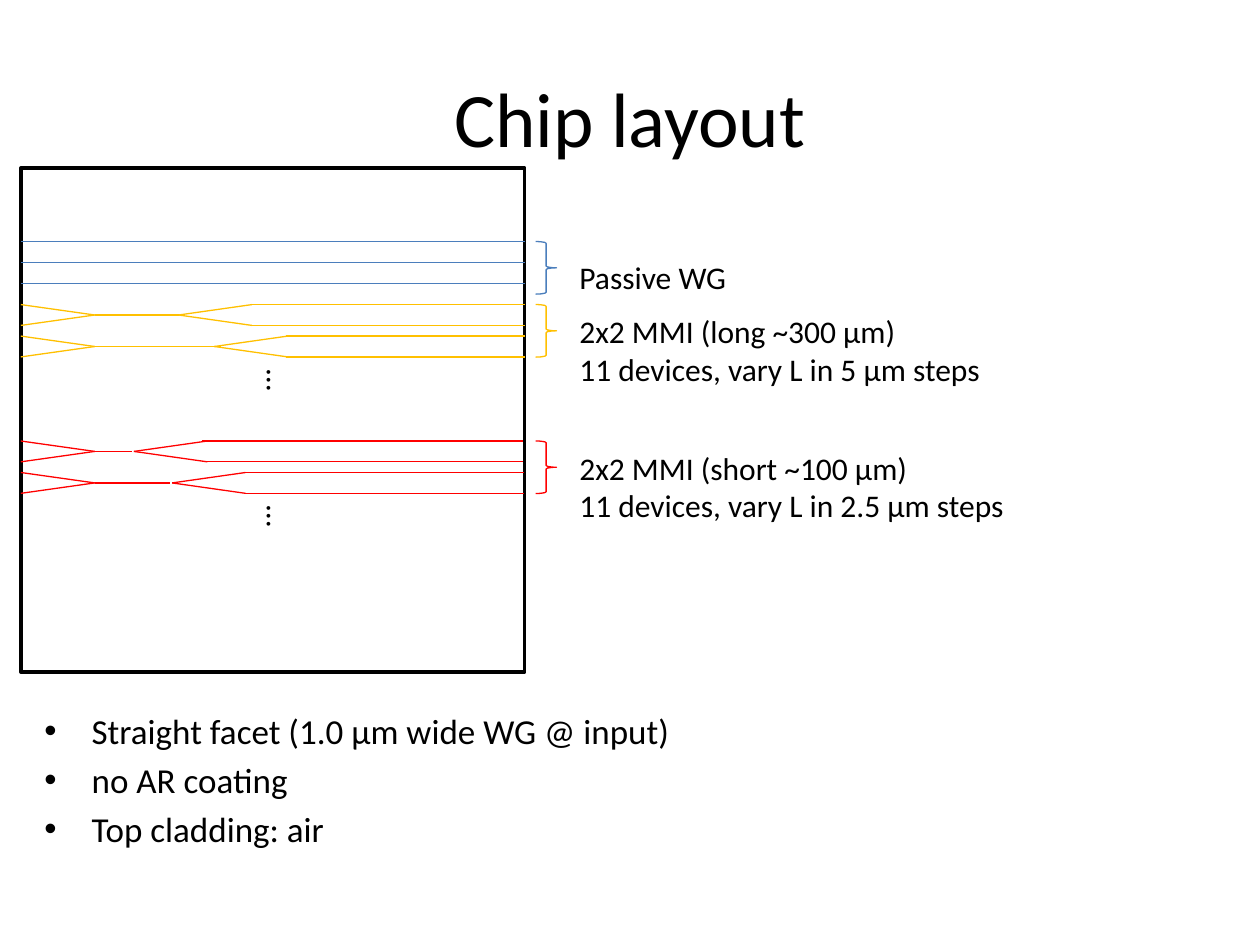
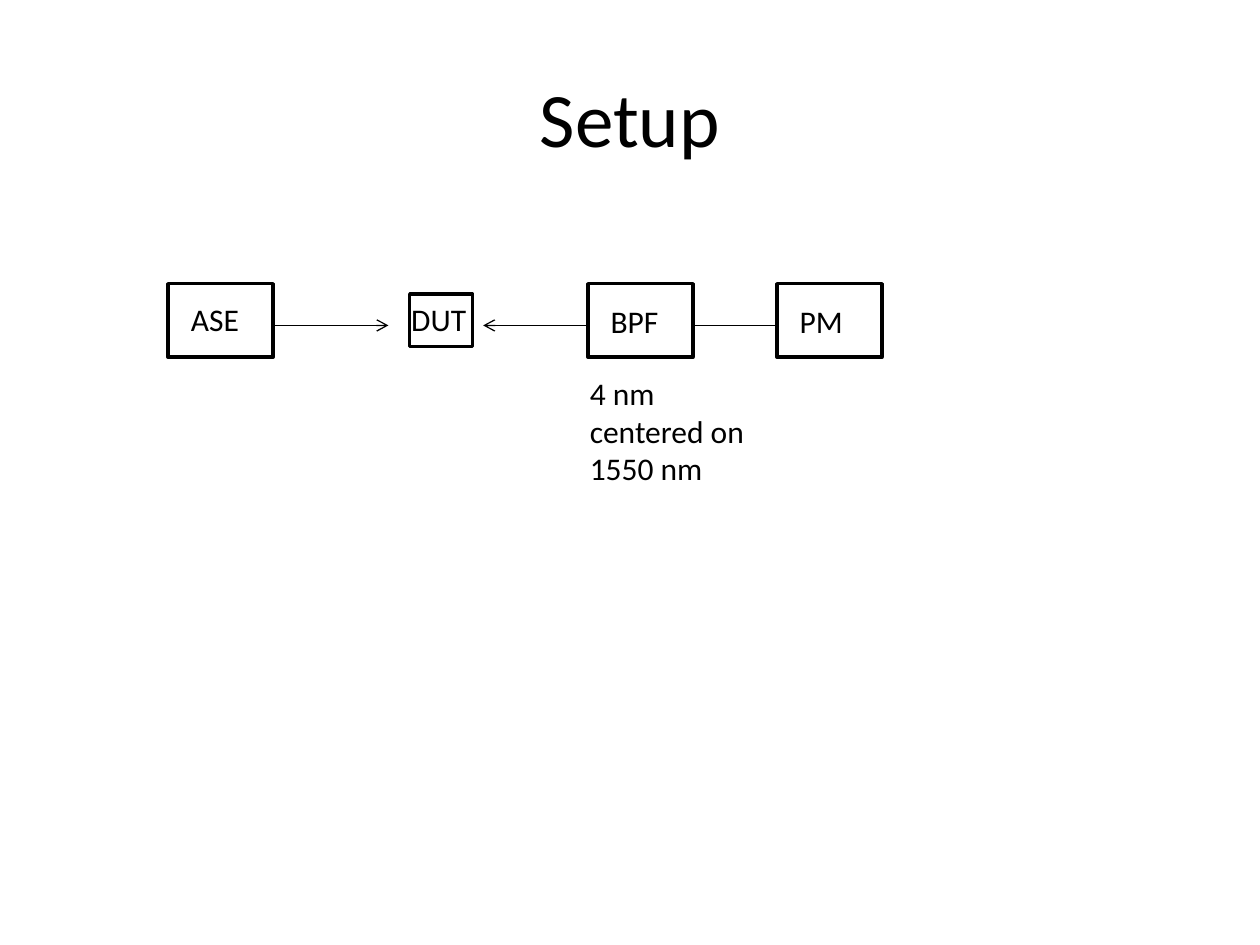
"""Build the chip layout and measurement setup slides."""
from pptx import Presentation
from pptx.dml.color import RGBColor
from pptx.enum.shapes import MSO_CONNECTOR, MSO_SHAPE
from pptx.enum.text import MSO_ANCHOR, MSO_AUTO_SIZE, PP_ALIGN
from pptx.oxml.ns import qn
from pptx.util import Cm, Pt
from lxml import etree

BLACK = RGBColor(0x00, 0x00, 0x00)
BLUE = RGBColor(0x4B, 0x7E, 0xBC)
GOLD = RGBColor(0xFF, 0xC0, 0x00)
RED = RGBColor(0xFF, 0x00, 0x00)
FONT = "Calibri"
RECT = MSO_SHAPE.RECTANGLE
BRACE = MSO_SHAPE.RIGHT_BRACE
LINE = MSO_CONNECTOR.STRAIGHT
CENTER = PP_ALIGN.CENTER
MIDDLE = MSO_ANCHOR.MIDDLE
GROW = MSO_AUTO_SIZE.SHAPE_TO_FIT_TEXT

THIN, THICK = 0.75, 2
EDGE, SIDE = 0.42, 10.16
FACET = EDGE + SIDE
PORT = 1.91
TAPER = 1.48
GAP = 0.42
PITCH = 0.635


def place(shape, left, top, width, height):
    """Move and size a shape, in centimetres."""
    shape.left, shape.top = Cm(left), Cm(top)
    shape.width, shape.height = Cm(width), Cm(height)


def write(frame, lines, size):
    """Fill a text frame with one paragraph per line."""
    frame.text = "\n".join(lines)
    for para in frame.paragraphs:
        para.font.name = FONT
        para.font.size = Pt(size)
        para.font.color.rgb = BLACK


def start(deck, layout, title):
    """Add a slide with the shared title style."""
    slide = deck.slides.add_slide(deck.slide_layouts[layout])
    head = slide.shapes.title
    place(head, 1.27, 0.76, 22.86, 3.18)
    write(head.text_frame, [title], 44)
    head.text_frame.vertical_anchor = MIDDLE
    head.text_frame.paragraphs[0].alignment = CENTER
    return slide


def label(slide, left, top, width, height, *lines, turn=0):
    """Add a text box."""
    box = slide.shapes.add_textbox(Cm(left), Cm(top), Cm(width), Cm(height))
    box.rotation = turn
    box.text_frame.word_wrap = True
    box.text_frame.auto_size = GROW
    write(box.text_frame, lines, 18)


def outline(slide, kind, left, top, width, height, color, weight):
    """Add an unfilled preset shape."""
    shape = slide.shapes.add_shape(kind, Cm(left), Cm(top), Cm(width), Cm(height))
    shape.shadow.inherit = False
    shape.fill.background()
    shape.line.color.rgb = color
    shape.line.width = Pt(weight)


def wire(slide, x1, y1, x2, y2, color, arrow=False):
    """Add a thin straight line, with an arrowhead at its end if wanted."""
    line = slide.shapes.add_connector(LINE, Cm(x1), Cm(y1), Cm(x2), Cm(y2))
    line.line.color.rgb = color
    line.line.width = Pt(THIN)
    if arrow:
        etree.SubElement(line.line._get_or_add_ln(), qn("a:tailEnd"), type="arrow")
    etree.SubElement(line._element.spPr, qn("a:effectLst"))


def brace(slide, top, color):
    """Add the brace beside a group of guides."""
    outline(slide, BRACE, 10.8, top, 0.42, 1.06, color, THIN)


def coupler(slide, top, core, fork, arm, end, color):
    """Draw a 2x2 coupler: input tapers, core, output tapers and arms."""
    mid = top + GAP / 2
    wire(slide, PORT, mid, core, mid, color)
    for y in (top, top + GAP):
        wire(slide, EDGE, y, PORT, mid, color)
        wire(slide, fork, mid, fork + TAPER, y, color)
        wire(slide, arm, y, end, y, color)


def chip(deck):
    """Build the chip layout slide."""
    slide = start(deck, 1, "Chip layout")
    body = slide.placeholders[1]
    place(body, 0.64, 14.17, 13.97, 3.05)
    write(body.text_frame, ["Straight facet (1.0 μm wide WG @ input)",
                            "no AR coating", "Top cladding: air"], 20)
    outline(slide, RECT, EDGE, 3.39, SIDE, SIDE, BLACK, THICK)

    guide = 4.87
    for row in range(3):
        y = guide + row * GAP
        wire(slide, EDGE, y, FACET, y, BLUE)
    brace(slide, guide, BLUE)
    label(slide, 11.43, 5.08, 3.6, 1.03, "Passive WG")

    groups = (
        (6.14, GOLD, "2x2 MMI (long ~300 μm)", "11 devices, vary L in 5 μm steps",
         ((3.6, 3.6, 5.08, FACET), (4.45, 4.32, 5.77, FACET))),
        (8.89, RED, "2x2 MMI (short ~100 μm)", "11 devices, vary L in 2.5 μm steps",
         ((2.67, 2.7, 4.07, 10.55), (3.43, 3.47, 4.93, 10.57))),
    )
    for top, color, name, steps, parts in groups:
        for row, (core, fork, arm, end) in enumerate(parts):
            coupler(slide, top + row * PITCH, core, fork, arm, end, color)
        brace(slide, top, color)
        label(slide, 11.43, top + 0.03, 10.16, 1.8, name, steps)
        label(slide, 4.87, top + 2 * PITCH, 1.48, 1.06, "…", turn=90)


def setup(deck):
    """Build the measurement setup slide."""
    slide = start(deck, 5, "Setup")
    for name, left, top in (("ASE", 3.39, 5.93), ("BPF", 11.85, 5.97),
                            ("PM", 15.66, 5.97)):
        outline(slide, RECT, left, 5.72, 2.12, 1.48, BLACK, THICK)
        label(slide, left + 0.21, top, 2.12, 1.03, name)
    outline(slide, RECT, 8.26, 5.93, 1.27, 1.06, BLACK, THICK)
    label(slide, 8.04, 5.93, 1.7, 1.03, "DUT")
    label(slide, 11.64, 7.41, 4.02, 2.57, "4 nm centered on 1550 nm")

    beam = 6.56
    for x1, x2, arrow in ((5.51, 7.83, True), (11.85, 9.74, True),
                          (13.97, 15.66, False)):
        wire(slide, x1, beam, x2, beam, BLACK, arrow)


def main():
    """Build and save the deck."""
    deck = Presentation()
    deck.slide_width, deck.slide_height = Cm(25.4), Cm(19.05)
    chip(deck)
    setup(deck)
    deck.save("out.pptx")


if __name__ == "__main__":
    main()
